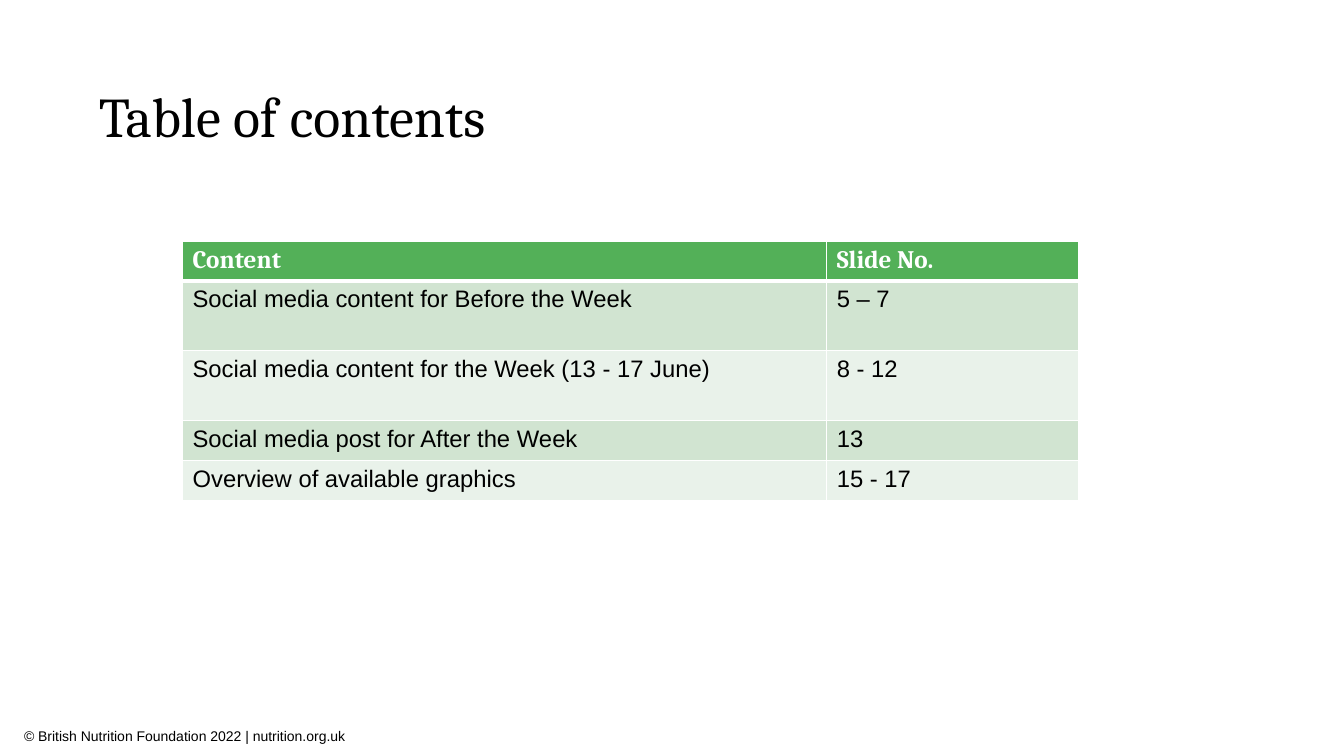
from lxml.etree import SubElement
from pptx import Presentation
from pptx.dml.color import RGBColor
from pptx.enum.text import MSO_ANCHOR, MSO_AUTO_SIZE, PP_ALIGN
from pptx.oxml.ns import qn
from pptx.util import Emu, Pt

PX = 9144  # 100 px to the inch
BLACK = RGBColor(0x00, 0x00, 0x00)
WHITE = RGBColor(0xFF, 0xFF, 0xFF)
GREEN = RGBColor(0x53, 0xB0, 0x58)
BANDS = RGBColor(0xD1, 0xE4, 0xD1), RGBColor(0xE9, 0xF2, 0xEA)

CONTENTS = [
    ("Content", "Slide No."),
    ("Social media content for Before the Week", "5 – 7"),
    ("Social media content for the Week (13 - 17 June)", "8 - 12"),
    ("Social media post for After the Week", "13"),
    ("Overview of available graphics", "15 - 17"),
]
COL_WIDTHS = 639, 250
ROW_HEIGHTS = 40, 69, 69, 40, 40


def px(*lengths):
    return [Emu(n * PX) for n in lengths]


def write(tf, text, font, size, color, bold=False):
    tf.text = text
    p = tf.paragraphs[0]
    p.alignment = PP_ALIGN.LEFT
    f = p.runs[0].font
    f.name, f.size, f.bold = font, Pt(size), bold
    f.color.rgb = color
    return p


def add_title(s, box, text):
    sp = s.shapes.title
    sp.left, sp.top, sp.width, sp.height = px(*box)
    tf = sp.text_frame
    p = write(tf, text, "Cambria", 40, BLACK)
    p.line_spacing = 0.9
    tf.vertical_anchor = MSO_ANCHOR.BOTTOM
    tf.auto_size = MSO_AUTO_SIZE.NONE


def set_border(cell, side, points):
    ln = SubElement(cell._tc.get_or_add_tcPr(), qn(f"a:ln{side}"), w=str(Pt(points)))
    fill = SubElement(ln, qn("a:solidFill"))
    SubElement(fill, qn("a:srgbClr"), val=str(WHITE))


def add_contents_table(s, box):
    frame = s.shapes.add_table(len(CONTENTS), len(COL_WIDTHS), *px(*box))
    table = frame.table
    for column, width in zip(table.columns, px(*COL_WIDTHS)):
        column.width = width
    for i, (row, height) in enumerate(zip(table.rows, px(*ROW_HEIGHTS))):
        row.height = height
        for cell, text in zip(row.cells, CONTENTS[i]):
            if i == 0:
                write(cell.text_frame, text, "Cambria", 18, WHITE, bold=True)
            else:
                write(cell.text_frame, text, "Arial", 17, BLACK)
            # Borders come before the fill in the cell properties
            for side in "LRTB":
                under_header = (i, side) in ((0, "B"), (1, "T"))
                set_border(cell, side, 3 if under_header else 1)
            cell.fill.solid()
            cell.fill.fore_color.rgb = BANDS[(i - 1) % 2] if i else GREEN


def add_footer(s, box, text):
    tf = s.shapes.add_textbox(*px(*box)).text_frame
    tf.word_wrap = True
    write(tf, text, "Arial", 10, BLACK)


def build_contents_slide(prs):
    s = prs.slides.add_slide(prs.slide_layouts[5])
    s.background.fill.solid()
    s.background.fill.fore_color.rgb = WHITE
    add_footer(s, (14, 717, 382, 57),
               "© British Nutrition Foundation 2022 | nutrition.org.uk")
    add_title(s, (88, 77, 1158, 76), "Table of contents")
    add_contents_table(s, (181, 239, sum(COL_WIDTHS), sum(ROW_HEIGHTS)))


def main():
    prs = Presentation()
    prs.slide_width, prs.slide_height = px(1333, 750)
    build_contents_slide(prs)
    prs.save("out.pptx")


if __name__ == "__main__":
    main()
